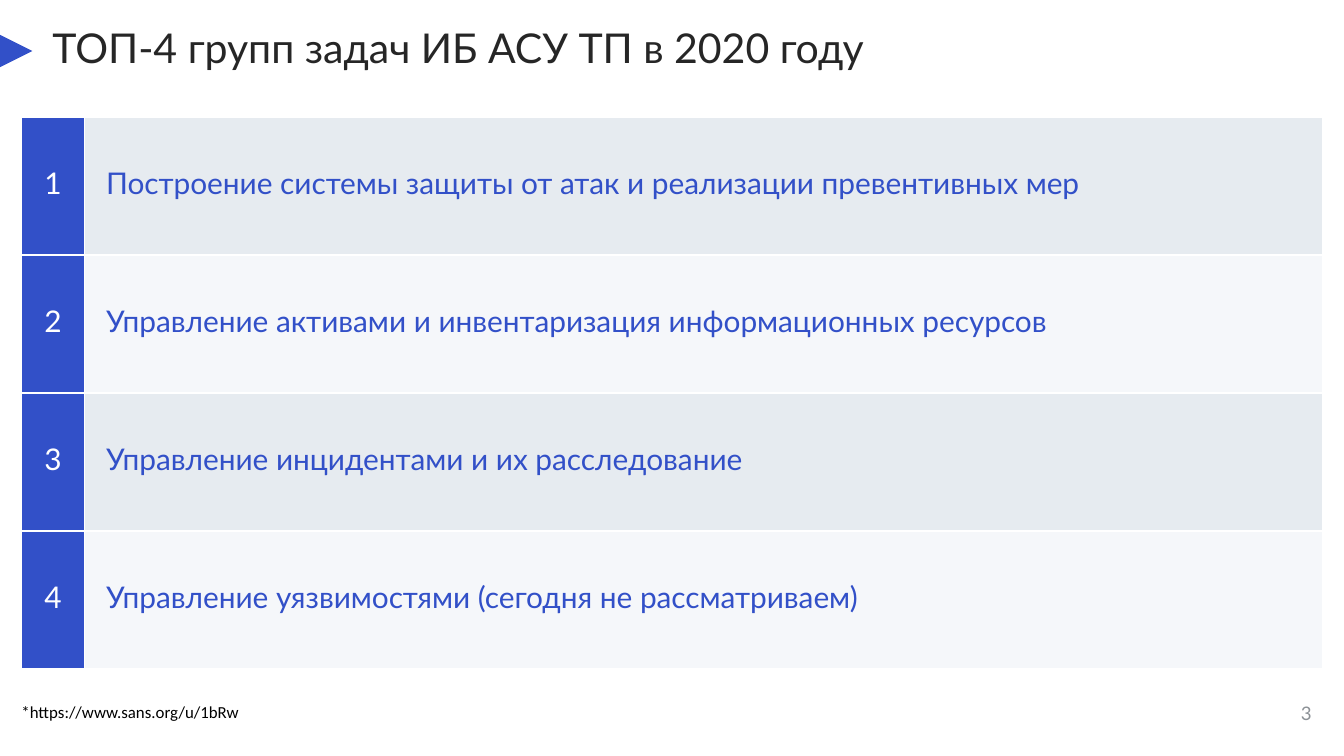
from lxml import etree
from pptx import Presentation
from pptx.dml.color import RGBColor
from pptx.enum.shapes import MSO_SHAPE
from pptx.enum.text import MSO_ANCHOR, MSO_AUTO_SIZE, PP_ALIGN
from pptx.oxml.ns import qn
from pptx.util import Inches, Pt

BLUE = RGBColor(0x32, 0x50, 0xC8)
DARK = RGBColor(0x26, 0x26, 0x26)
GRAY = RGBColor(0x8C, 0x91, 0x96)
MIST = RGBColor(0xE6, 0xEB, 0xF0)
PALE = RGBColor(0xF5, 0xF7, 0xFA)
WHITE = RGBColor(0xFF, 0xFF, 0xFF)
BLACK = RGBColor(0, 0, 0)
LEFT, CENTER, RIGHT = PP_ALIGN.LEFT, PP_ALIGN.CENTER, PP_ALIGN.RIGHT
TOP, MIDDLE, BOTTOM = MSO_ANCHOR.TOP, MSO_ANCHOR.MIDDLE, MSO_ANCHOR.BOTTOM
NO_FIT = MSO_AUTO_SIZE.NONE
TRIANGLE = MSO_SHAPE.ISOSCELES_TRIANGLE

TITLE = "ТОП-4 групп задач ИБ АСУ ТП в 2020 году"
TASKS = [
    "Построение системы защиты от атак и реализации превентивных мер",
    "Управление активами и инвентаризация информационных ресурсов",
    "Управление инцидентами и их расследование",
    "Управление уязвимостями (сегодня не рассматриваем)",
]


def write(frame, text, size, color, align=LEFT, font="Lato"):
    """Put one styled paragraph in a text frame and return it."""
    para = frame.paragraphs[0]
    para.text = text
    para.alignment = align
    para.font.size = Pt(size)
    para.font.name = font
    para.font.color.rgb = color
    return para


def set_frame(frame, anchor=TOP):
    """Remove the margins of a frame and let it wrap."""
    frame.margin_left = frame.margin_right = 0
    frame.margin_top = frame.margin_bottom = 0
    frame.word_wrap = True
    frame.auto_size = NO_FIT
    frame.vertical_anchor = anchor


def add_head(slide, left, top, width, height):
    """Place the title and the marker at the left edge of its band."""
    side = Inches(0.24)
    mark = slide.shapes.add_shape(TRIANGLE, left, top + Inches(0.06), side, side)
    mark.rotation = 90
    mark.shadow.inherit = False
    mark.fill.solid()
    mark.fill.fore_color.rgb = BLUE
    mark.line.fill.background()
    title = slide.shapes.title
    indent = Inches(0.39)
    title.left, title.top = left + indent, top
    title.width, title.height = width - indent, height
    set_frame(title.text_frame)
    write(title.text_frame, TITLE, 22, DARK).line_spacing = Pt(24)


def add_border(cell):
    """Draw a thin white line on every side of a cell."""
    props = cell._tc.get_or_add_tcPr()
    for at, side in enumerate(("lnL", "lnR", "lnT", "lnB")):
        line = etree.Element(qn(f"a:{side}"), w=str(Pt(1)))
        fill = etree.SubElement(line, qn("a:solidFill"))
        etree.SubElement(fill, qn("a:srgbClr"), val=str(WHITE))
        props.insert(at, line)


def fill_cell(cell, text, fill, color, align, pad):
    """Style one table cell and write its text."""
    cell.fill.solid()
    cell.fill.fore_color.rgb = fill
    cell.margin_left = cell.margin_right = pad
    cell.margin_top, cell.margin_bottom = 0, Inches(0.04)
    cell.vertical_anchor = MIDDLE
    write(cell.text_frame, text, 16, color, align)
    add_border(cell)


def add_tasks(slide, left, top, width, height):
    """Place the table of numbered tasks."""
    frame = slide.shapes.add_table(len(TASKS), 2, left, top, width, height)
    table = frame.table
    table.first_row = table.horz_banding = False
    table.columns[0].width = Inches(0.47)
    table.columns[1].width = width - Inches(0.47)
    for row, task in enumerate(TASKS):
        band = PALE if row % 2 else MIST
        fill_cell(table.cell(row, 0), str(row + 1), BLUE, WHITE, CENTER, 0)
        fill_cell(table.cell(row, 1), task, band, BLUE, LEFT, Inches(0.16))


def add_foot(slide, left, top, width, height):
    """Place the source link and the page number."""
    note = slide.shapes.add_textbox(left, top + Inches(0.22), Inches(9.21), Inches(0.2))
    set_frame(note.text_frame)
    write(note.text_frame, "*https://www.sans.org/u/1bRw", 9, BLACK, font="Calibri")
    side = Inches(0.39)
    page = slide.shapes.add_textbox(left + width - side, top, side, height)
    set_frame(page.text_frame, BOTTOM)
    write(page.text_frame, "3", 10, GRAY, RIGHT)


def main():
    """Build the slide and save it."""
    deck = Presentation()
    deck.slide_width = Inches(10)
    deck.slide_height = deck.slide_width * 9 // 16
    slide = deck.slides.add_slide(deck.slide_layouts[5])
    add_head(slide, 0, Inches(0.2), Inches(7.71), Inches(0.71))
    add_tasks(slide, Inches(0.16), Inches(0.87), Inches(9.68), Inches(4.11))
    add_foot(slide, Inches(0.16), Inches(5), Inches(9.6), Inches(0.39))
    deck.save("out.pptx")


if __name__ == "__main__":
    main()
